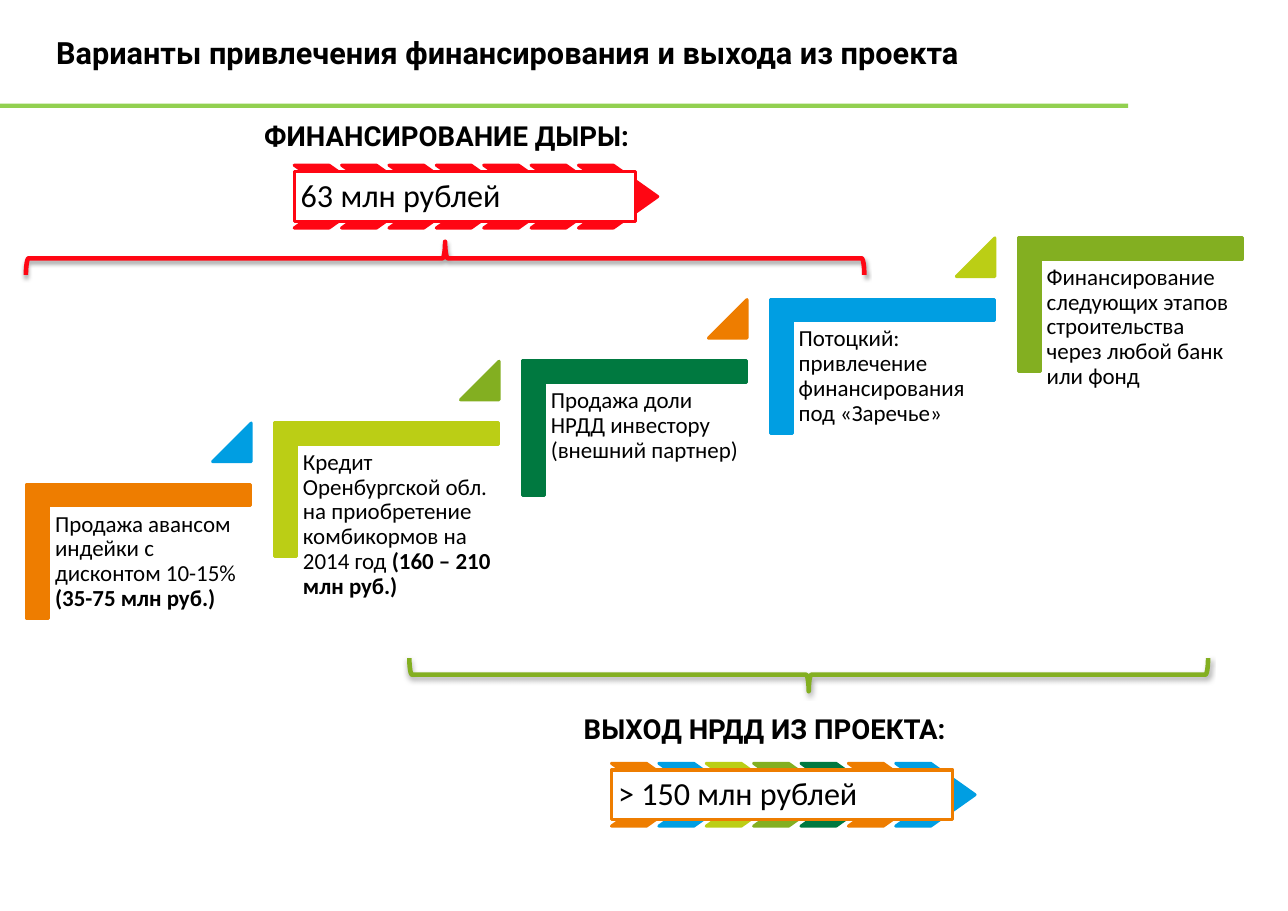
from lxml import etree
from pptx import Presentation
from pptx.dml.color import RGBColor
from pptx.enum.shapes import MSO_SHAPE
from pptx.enum.text import MSO_ANCHOR
from pptx.oxml.ns import qn
from pptx.util import Inches, Pt

CORNER = MSO_SHAPE.CORNER
TRIANGLE = MSO_SHAPE.ISOSCELES_TRIANGLE
CHEVRON = MSO_SHAPE.CHEVRON
BRACE = MSO_SHAPE.RIGHT_BRACE
RECTANGLE = MSO_SHAPE.RECTANGLE
TOP, MIDDLE = MSO_ANCHOR.TOP, MSO_ANCHOR.MIDDLE

COLORS = {
    "black": "000000",
    "white": "FFFFFF",
    "rule": "92D050",
    "orange": "EE7D00",
    "blue": "009EE2",
    "lime": "BBCE15",
    "green": "83AF21",
    "dark green": "007940",
    "red": "FF0613",
}

# Step colour, plain text, bold ending
STEPS = [
    ("orange", "Продажа авансом индейки с дисконтом 10-15% ", "(35-75 млн руб.)"),
    ("lime", "Кредит Оренбургской обл. на приобретение комбикормов на 2014 год ",
     "(160 – 210 млн руб.)"),
    ("dark green", "Продажа доли НРДД инвестору (внешний партнер)", ""),
    ("blue", "Потоцкий: привлечение финансирования под «Заречье»", ""),
    ("green", "Финансирование следующих этапов строительства через любой банк "
     "или фонд", ""),
]
RISE_COLORS = ["blue", "green", "orange", "lime"]
STEP_RUN, STEP_RISE = 2.25, 0.56

EXIT_COLORS = ["orange", "blue", "lime", "green", "dark green", "orange", "blue"]
CHEVRON_PITCH = 0.43


def color(name):
    return RGBColor.from_string(COLORS[name])


def add_figure(slide, preset, box, fill=None, line=None, weight=2, adjust=(), rotation=0):
    figure = slide.shapes.add_shape(preset, *map(Inches, box))
    figure.shadow.inherit = False
    figure.rotation = rotation
    for index, value in enumerate(adjust):
        figure.adjustments[index] = value
    if fill:
        figure.fill.solid()
        figure.fill.fore_color.rgb = color(fill)
    else:
        figure.fill.background()
    if line:
        figure.line.color.rgb = color(line)
        figure.line.width = Pt(weight)
    else:
        figure.line.fill.background()
    return figure


def write_text(holder, text, bold_ending="", size=15, font="Calibri", bold=False,
               anchor=TOP, margins=(0.06, 0.06), spacing=0.9):
    frame = holder.text_frame
    frame.word_wrap = True
    frame.vertical_anchor = anchor
    frame.margin_left = frame.margin_right = Inches(margins[0])
    frame.margin_top = frame.margin_bottom = Inches(margins[1])
    paragraph = frame.paragraphs[0]
    paragraph.line_spacing = spacing
    for content, is_bold in ((text, bold), (bold_ending, True)):
        if content:
            run = paragraph.add_run()
            run.text = content
            run.font.name = font
            run.font.size = Pt(size)
            run.font.bold = is_bold
            run.font.color.rgb = color("black")


def add_text(slide, box, text, **style):
    write_text(slide.shapes.add_textbox(*map(Inches, box)), text, **style)


def add_heading(slide, left, top, text):
    add_text(slide, (left, top, 4.3, 0.4), text, size=18, font="Roboto", bold=True,
             margins=(0.1, 0.05), spacing=1)


def add_step(slide, index, fill, text, bold_ending):
    x, y = STEP_RUN * index, -STEP_RISE * index
    add_figure(slide, CORNER, (0.65 + x, 3.99 + y, 1.22, 2.03), fill, fill,
               adjust=(0.161, 0.161), rotation=90)
    add_text(slide, (0.44 + x, 4.59 + y, 1.84, 1.61), text, bold_ending=bold_ending)
    if index < len(RISE_COLORS):
        rise = RISE_COLORS[index]
        add_figure(slide, TRIANGLE, (1.93 + x, 3.84 + y, 0.35, 0.35), rise, rise,
                   adjust=(1,))


def add_brace(slide, box, line, rotation):
    brace = add_figure(slide, BRACE, box, line=line, weight=3, rotation=rotation)
    effects = brace._element.spPr.find(qn("a:effectLst"))
    shadow = etree.SubElement(effects, qn("a:outerShdw"), blurRad=str(Pt(3.1)),
                              dist=str(Pt(1.8)), dir="5400000", rotWithShape="0")
    tint = etree.SubElement(shadow, qn("a:srgbClr"), val=COLORS["black"])
    etree.SubElement(tint, qn("a:alpha"), val="35000")


def add_amount(slide, left, top, chevron_colors, text):
    """Draw a row of chevrons with a framed amount over it."""
    for index, fill in enumerate(chevron_colors):
        add_figure(slide, CHEVRON, (left + CHEVRON_PITCH * index, top, 0.72, 0.57),
                   fill, fill, adjust=(0.706,))
    frame = add_figure(slide, RECTANGLE, (left, top + 0.06, 3.1, 0.45), "white",
                       chevron_colors[0])
    write_text(frame, text, size=21, anchor=MIDDLE)
    frame.text_frame.paragraphs[0].alignment = 1


def main():
    deck = Presentation()
    deck.slide_width, deck.slide_height = Inches(11.69), Inches(8.27)
    slide = deck.slides.add_slide(deck.slide_layouts[6])

    add_figure(slide, RECTANGLE, (0, 0.94, 10.24, 0.04), "rule")
    add_text(slide, (0.4, 0, 9.83, 0.94),
             "Варианты привлечения финансирования и выхода из проекта",
             size=20, font="Roboto", bold=True, anchor=MIDDLE,
             margins=(0.11, 0.06), spacing=1)

    for index, step in enumerate(STEPS):
        add_step(slide, index, *step)

    add_brace(slide, (7.19, 2.5, 0.3, 7.25), "green", 90)
    add_amount(slide, 5.55, 6.93, EXIT_COLORS, "> 150 млн рублей")
    add_heading(slide, 5.2, 6.41, "ВЫХОД НРДД ИЗ ПРОЕКТА:")

    add_brace(slide, (3.89, -1.46, 0.3, 7.61), "red", 270)
    add_heading(slide, 2.3, 1.03, "ФИНАНСИРОВАНИЕ ДЫРЫ:")
    add_amount(slide, 2.67, 1.5, ["red"] * 7, "63 млн рублей")

    deck.save("out.pptx")


if __name__ == "__main__":
    main()
